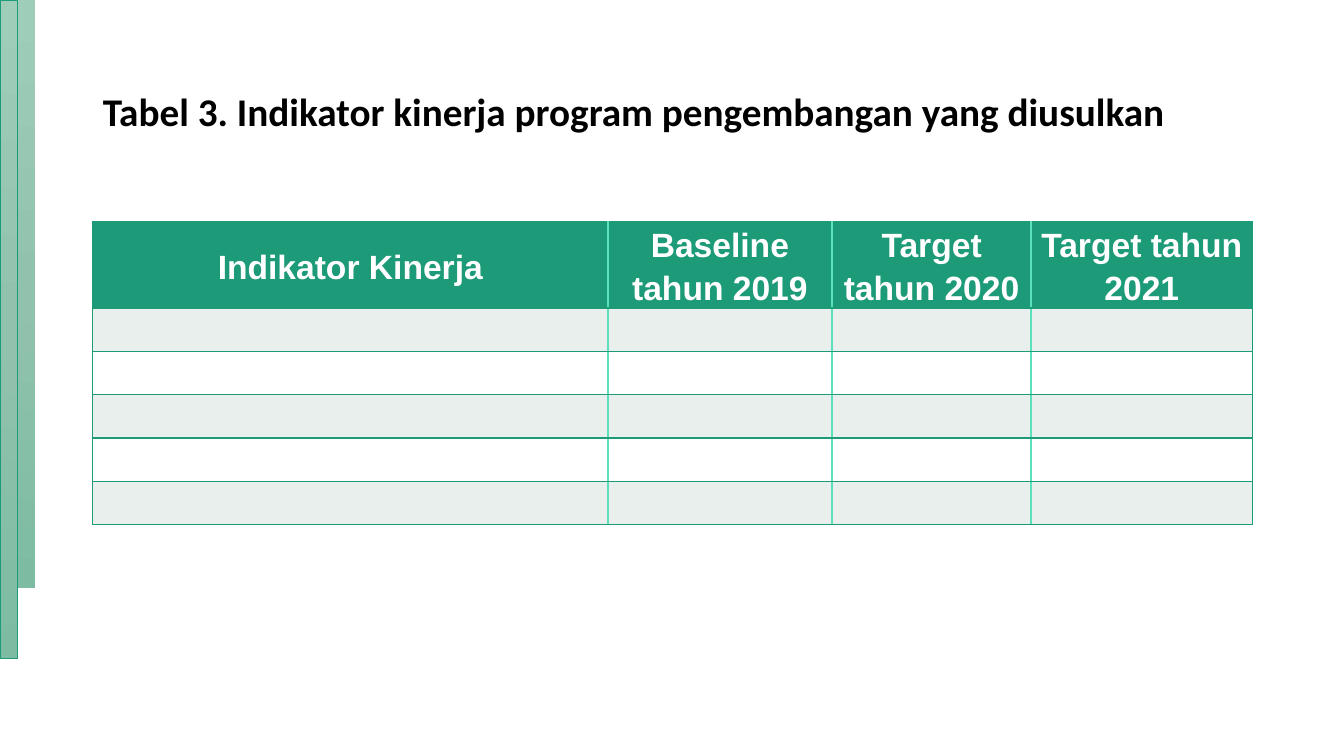
from copy import deepcopy

from pptx import Presentation
from pptx.dml.color import RGBColor
from pptx.enum.shapes import MSO_SHAPE as Shape
from pptx.enum.text import MSO_ANCHOR as Anchor, MSO_AUTO_SIZE as AutoSize, PP_ALIGN as Align
from pptx.oxml.ns import qn
from pptx.util import Pt
from lxml.etree import SubElement

PX = 9144  # EMU per px, 100 px to the inch


def color(hex_code):
    return RGBColor.from_string(hex_code)


class SlideBuilder:
    GREEN, MINT, BAND, WHITE, BLACK = "1D9A78", "5AE0BB", "E8EFEC", "FFFFFF", "000000"
    BAR_STOPS = ((0, "9ECDBA"), (0.5, "91C2AE"), (1, "7DBCA3"))

    def __init__(self, deck):
        self.slide = deck.slides.add_slide(deck.slide_layouts[5])

    def add_text(self, paragraph, text, font, size, ink, align, spacing):
        paragraph.alignment = align
        paragraph.line_spacing = spacing
        run = paragraph.add_run()
        run.text = text
        run.font.name = font
        run.font.size = Pt(size)
        run.font.bold = True
        run.font.color.rgb = color(ink)

    def title(self, text, left, top, width, height):
        heading = self.slide.shapes.title
        heading.left, heading.top = left * PX, top * PX
        heading.width, heading.height = width * PX, height * PX
        frame = heading.text_frame
        frame.word_wrap = True
        frame.auto_size = AutoSize.NONE
        frame.vertical_anchor = Anchor.MIDDLE
        self.add_text(frame.paragraphs[0], text, "Calibri", 28, self.BLACK, Align.LEFT, 0.9)

    def bar(self, left, top, width, height, outlined):
        bar = self.slide.shapes.add_shape(
            Shape.RECTANGLE, left * PX, top * PX, width * PX, height * PX)
        bar.shadow.inherit = False
        bar.fill.gradient()
        bar.fill.gradient_angle = 270
        stop_list = bar._element.spPr.find(qn("a:gradFill")).find(qn("a:gsLst"))
        stop_list.insert(1, deepcopy(stop_list[0]))
        for stop, (position, shade) in zip(bar.fill.gradient_stops, self.BAR_STOPS):
            stop.position = position
            stop.color.rgb = color(shade)
        if outlined:
            bar.line.color.rgb = color(self.GREEN)
            bar.line.width = Pt(0.5)
        else:
            bar.line.fill.background()

    def border(self, cell, side, shade, points):
        line = SubElement(cell._tc.get_or_add_tcPr(), qn(f"a:ln{side}"), w=str(Pt(points)))
        SubElement(SubElement(line, qn("a:solidFill")), qn("a:srgbClr"), val=shade)

    def table(self, headers, left, top, widths, heights):
        table = self.slide.shapes.add_table(
            len(heights), len(widths), left * PX, top * PX,
            sum(widths) * PX, sum(heights) * PX).table
        table.horz_banding = False
        for column, width in zip(table.columns, widths):
            column.width = width * PX
        for row_index, (row, height) in enumerate(zip(table.rows, heights)):
            row.height = height * PX
            for column_index, cell in enumerate(row.cells):
                self.style_cell(cell, row_index, column_index, len(widths) - 1)
                if row_index == 0:
                    self.add_text(cell.text_frame.paragraphs[0], headers[column_index],
                                  "Arial", 24, self.WHITE, Align.CENTER, 1.15)

    def style_cell(self, cell, row_index, column_index, last_column):
        cell.margin_left = cell.margin_right = 7 * PX
        cell.margin_top = cell.margin_bottom = 0
        cell.vertical_anchor = Anchor.MIDDLE
        outer, inner = (self.GREEN, 1), (self.MINT, 1.5)
        self.border(cell, "L", *(outer if column_index == 0 else inner))
        self.border(cell, "R", *(outer if column_index == last_column else inner))
        self.border(cell, "T", *outer)
        self.border(cell, "B", *outer)
        band = self.BAND if row_index % 2 else self.WHITE
        cell.fill.solid()
        cell.fill.fore_color.rgb = color(self.GREEN if row_index == 0 else band)


def main():
    deck = Presentation()
    deck.slide_width, deck.slide_height = 1333 * PX, 750 * PX
    builder = SlideBuilder(deck)

    # Side bars
    builder.bar(18, 0, 17, 583, outlined=False)
    builder.bar(0, 0, 17, 653, outlined=True)

    # Heading
    builder.title("Tabel 3. Indikator kinerja program pengembangan yang diusulkan",
                  92, 40, 1150, 145)

    # Performance indicators, with five rows to fill in
    headers = ["Indikator Kinerja", "Baseline tahun 2019",
               "Target tahun 2020", "Target tahun 2021"]
    builder.table(headers, 92, 220, widths=[511, 222, 198, 219], heights=[85] + [43] * 5)

    deck.save("out.pptx")


if __name__ == "__main__":
    main()
